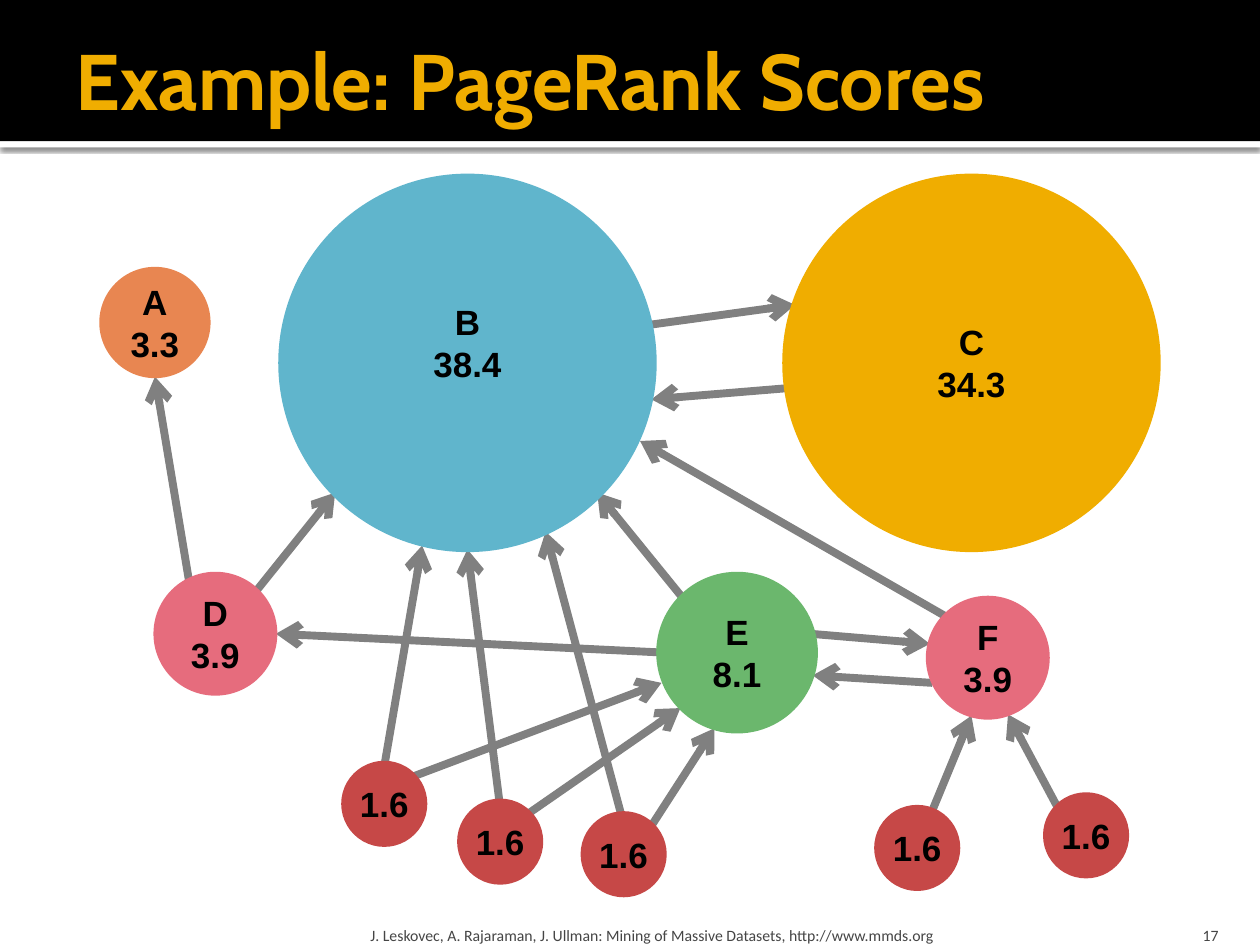
from dataclasses import dataclass

from lxml import etree
from pptx import Presentation
from pptx.dml.color import RGBColor
from pptx.enum.shapes import MSO_CONNECTOR, MSO_SHAPE
from pptx.enum.text import MSO_ANCHOR, PP_ALIGN
from pptx.oxml.ns import qn
from pptx.util import Inches, Pt

RECT, OVAL = MSO_SHAPE.RECTANGLE, MSO_SHAPE.OVAL
STRAIGHT = MSO_CONNECTOR.STRAIGHT
MIDDLE, BOTTOM = MSO_ANCHOR.MIDDLE, MSO_ANCHOR.BOTTOM
LEFT, CENTER, RIGHT = PP_ALIGN.LEFT, PP_ALIGN.CENTER, PP_ALIGN.RIGHT


@dataclass(frozen=True)
class Theme:
    black: str = "000000"
    white: str = "FFFFFF"
    gold: str = "F0AD00"
    blue: str = "60B5CC"
    green: str = "6BB76D"
    pink: str = "E66C7D"
    orange: str = "E88651"
    red: str = "C64847"
    arrow: str = "808080"
    footer: str = "454545"
    title_font: str = "Cabin"
    node_font: str = "Arial"
    footer_font: str = "Calibri"
    title_size: float = 45
    node_size: float = 20
    footer_size: float = 9
    arrow_width: float = 4.5
    node_line: float = 6


T = Theme()

# label, score, left, top, diameter, colour, bottom inset
PAGES = [
    ("B", "38.4", 2.25, 1.42, 2.92, T.blue, 0.33),
    ("C", "34.3", 6.25, 1.42, 2.92, T.gold, 0),
    ("E", "8.1", 5.25, 4.58, 1.2, T.green, 0),
    ("F", "3.9", 7.39, 4.77, 0.9, T.pink, 0),
    ("D", "3.9", 1.26, 4.58, 0.9, T.pink, 0),
    ("A", "3.3", 0.83, 2.16, 0.8, T.orange, 0),
]
LEAF_SCORE, LEAF_SIZE = "1.6", 0.6
LEAVES = [(2.75, 6.08), (3.67, 6.38), (4.65, 6.48), (6.98, 6.43), (8.32, 6.33)]

# start x, start y, end x, end y
LINKS = [
    (5.14, 2.58, 6.31, 2.42),  # B to C
    (6.26, 3.08, 5.17, 3.17),  # C to B
    (5.43, 4.76, 4.74, 3.91),  # E to B
    (2.01, 4.72, 2.66, 3.91),  # D to B
    (1.5, 4.61, 1.23, 2.99),   # D to A
    (3.05, 6.08, 3.35, 4.33),  # leaf 1 to B
    (3.26, 6.17, 5.25, 5.42),  # leaf 1 to E
    (5.28, 5.18, 2.19, 5.03),  # E to D
    (3.97, 6.41, 3.71, 4.36),  # leaf 2 to B
    (4.16, 6.48, 5.4, 5.62),   # leaf 2 to E
    (5.16, 6.57, 5.67, 5.78),  # leaf 3 to E
    (4.95, 6.54, 4.33, 4.22),  # leaf 3 to B
    (7.38, 6.48, 7.71, 5.68),  # leaf 4 to F
    (8.4, 6.42, 8, 5.67),      # leaf 5 to F
    (7.52, 4.9, 5.08, 3.5),    # F to B
    (7.4, 5.42, 6.45, 5.36),   # F to E
    (6.43, 5.03, 7.38, 5.11),  # E to F
]


def rgb(color):
    return RGBColor.from_string(color)


def write(sp, lines, font, size, color, bold=False, align=LEFT,
          anchor=MIDDLE, insets=(0, 0, 0, 0), wrap=True):
    tf = sp.text_frame
    tf.word_wrap = wrap
    tf.vertical_anchor = anchor
    (tf.margin_left, tf.margin_top,
     tf.margin_right, tf.margin_bottom) = map(Inches, insets)
    for i, line in enumerate(lines):
        p = tf.add_paragraph() if i else tf.paragraphs[0]
        p.alignment = align
        r = p.add_run()
        r.text = line
        r.font.name, r.font.size, r.font.bold = font, Pt(size), bold
        r.font.color.rgb = rgb(color)


def add_filled(slide, kind, box, color):
    sp = slide.shapes.add_shape(kind, *map(Inches, box))
    sp.shadow.inherit = False
    sp.fill.solid()
    sp.fill.fore_color.rgb = rgb(color)
    sp.line.fill.background()
    return sp


def add_text(slide, box, text, **style):
    sp = slide.shapes.add_textbox(*map(Inches, box))
    write(sp, [text], **style)


def add_drop_shadow(sp):
    effects = sp._element.spPr.find(qn("a:effectLst"))
    shadow = etree.SubElement(
        effects, qn("a:outerShdw"), blurRad=str(Pt(2.5)), dist=str(Pt(0.8)),
        dir="5400000", algn="t", rotWithShape="0")
    color = etree.SubElement(shadow, qn("a:srgbClr"), val=T.black)
    etree.SubElement(color, qn("a:alpha"), val="60000")


def add_header(slide, left, top, width, height):
    rule = add_filled(slide, RECT, (left, top + height, width, 0.05), T.white)
    add_drop_shadow(rule)
    add_filled(slide, RECT, (left, top, width, height), T.black)
    add_text(slide, (left + 0.5, top + 0.17, width - 1, 0.92),
             "Example: PageRank Scores", font=T.title_font, size=T.title_size,
             color=T.gold, bold=True, insets=(0.1, 0.05, 0.05, 0.05))


def add_link(slide, ends):
    line = slide.shapes.add_connector(STRAIGHT, *map(Inches, ends))
    line.line.color.rgb = rgb(T.arrow)
    line.line.width = Pt(T.arrow_width)
    etree.SubElement(line.line._get_or_add_ln(), qn("a:tailEnd"), type="arrow")
    etree.SubElement(line._element.spPr, qn("a:effectLst"))


def add_node(slide, left, top, size, color, lines, bottom_inset=0):
    sp = add_filled(slide, OVAL, (left, top, size, size), color)
    sp.line.color.rgb = rgb(color)
    sp.line.width = Pt(T.node_line)
    write(sp, lines, T.node_font, T.node_size, T.black, bold=True,
          align=CENTER, insets=(0, 0, 0, bottom_inset), wrap=False)


def add_graph(slide):
    for ends in LINKS:
        add_link(slide, ends)
    for label, score, left, top, size, color, inset in PAGES:
        add_node(slide, left, top, size, color, [label, score], inset)
    for left, top in LEAVES:
        add_node(slide, left, top, LEAF_SIZE, T.red, [LEAF_SCORE])


def add_footer(slide, top, height):
    style = dict(font=T.footer_font, size=T.footer_size, color=T.footer,
                 anchor=BOTTOM)
    add_text(slide, (8.97, top, 0.8, height), "17", align=RIGHT,
             insets=(0.1, 0.05, 0.1, 0), **style)
    add_text(slide, (2.89, top, 6.02, height),
             "J. Leskovec, A. Rajaraman, J. Ullman: Mining of Massive "
             "Datasets, http://www.mmds.org",
             insets=(0.05, 0.05, 0.05, 0), **style)


def main():
    prs = Presentation()
    prs.slide_width, prs.slide_height = Inches(10), Inches(7.5)
    slide = prs.slides.add_slide(prs.slide_layouts[6])
    add_header(slide, 0, 0, 10, 1.12)
    add_graph(slide)
    add_footer(slide, 7.2, 0.3)
    prs.save("out.pptx")


if __name__ == "__main__":
    main()
